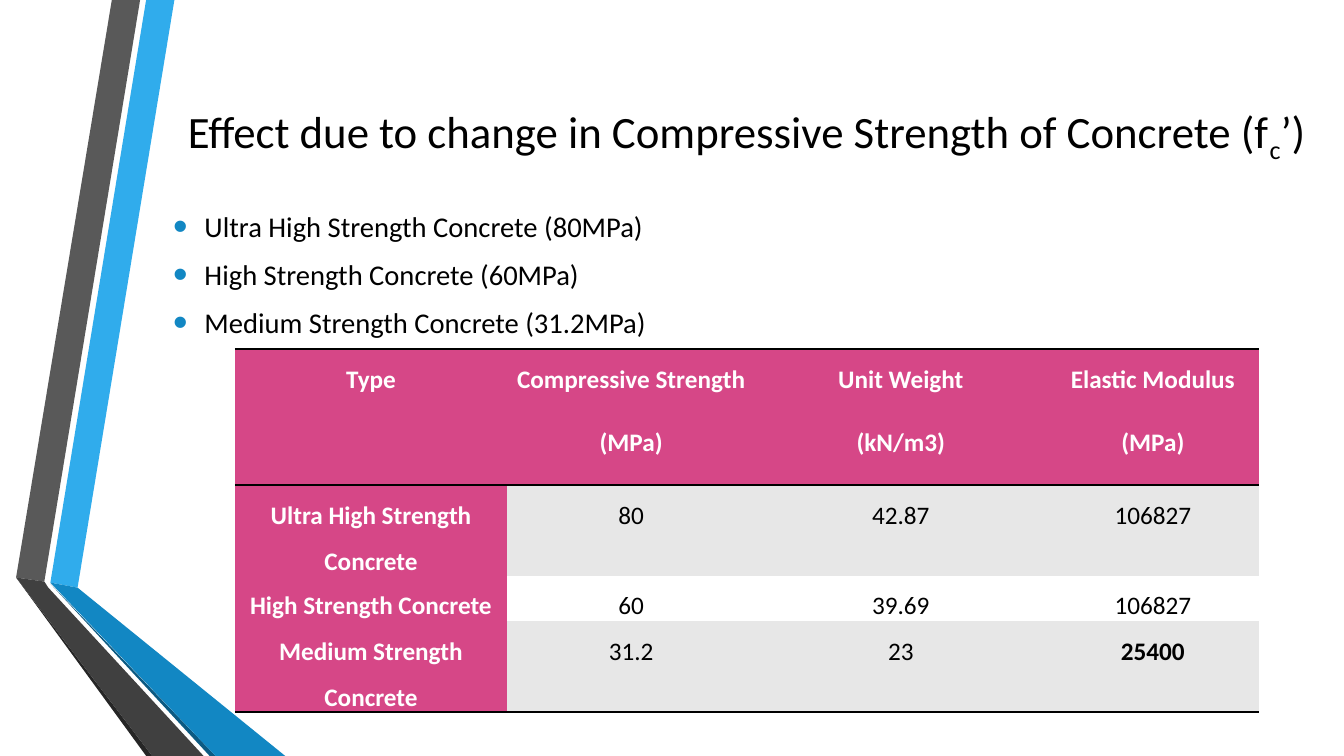
from lxml.etree import SubElement
from pptx import Presentation
from pptx.dml.color import RGBColor
from pptx.enum.text import MSO_ANCHOR, PP_ALIGN
from pptx.oxml import parse_xml
from pptx.oxml.ns import nsdecls, qn
from pptx.util import Inches, Pt

FONT = "Calibri"
BLACK, WHITE, PINK, GRAY = "000000", "FFFFFF", "D64787", "E7E7E7"
BULLET_BLUE = "1287C3"

# Ribbon facets, back to front: colour and corner points in inches
RIBBONS = [
    ("30ACEC", [(0.5, 5.78), (0.77, 5.83), (1.73, 0), (1.45, 0)]),
    ("595959", [(1.39, 0), (1.11, 0), (0.16, 5.73), (0.44, 5.77)]),
    ("262626", [(0.16, 5.73), (1.45, 7.5), (1.51, 7.5)]),
    ("0C5A82", [(0.5, 5.79), (2.08, 7.5), (2.14, 7.5)]),
    ("1287C3", [(0.5, 5.78), (2.14, 7.5), (2.83, 7.5), (0.77, 5.83)]),
    ("404040", [(2.02, 7.5), (0.48, 5.83), (0.44, 5.77), (0.16, 5.73), (1.51, 7.5)]),
]

BULLETS = [
    "Ultra High Strength Concrete (80MPa)",
    "High Strength Concrete (60MPa)",
    "Medium Strength Concrete (31.2MPa)",
]

COLUMN_WIDTHS = [2.7, 2.46, 2.89, 2.11]
ROW_HEIGHTS = [1.35, 0.78, 0.37, 0.78]
ROWS = [
    ["Type", "Compressive Strength\n(MPa)", "Unit Weight\n(kN/m3)", "Elastic Modulus\n(MPa)"],
    ["Ultra High Strength Concrete", "80", "42.87", "106827"],
    ["High Strength Concrete", "60", "39.69", "106827"],
    ["Medium Strength Concrete", "31.2", "23", "25400"],
]
PLAIN_TABLE_STYLE = "{2D5ABB26-0587-4C30-8999-92F81FD0307C}"


def rgb(color):
    return RGBColor.from_string(color)


def style_run(r, size, color=BLACK, bold=False):
    r.font.name = FONT
    r.font.size = Pt(size)
    r.font.bold = bold
    r.font.color.rgb = rgb(color)


def add_ribbon(slide, color, points):
    corners = [(Inches(x), Inches(y)) for x, y in points]
    builder = slide.shapes.build_freeform(*corners[0], scale=1.0)
    builder.add_line_segments(corners[1:], close=True)
    sp = builder.convert_to_shape()
    sp.shadow.inherit = False
    sp.fill.solid()
    sp.fill.fore_color.rgb = rgb(color)
    sp.line.fill.background()


def add_text_frame(slide, left, top, width, height):
    sp = slide.shapes.add_textbox(Inches(left), Inches(top), Inches(width), Inches(height))
    sp.text_frame.word_wrap = True
    return sp.text_frame


def add_title(slide):
    tf = add_text_frame(slide, 1.62, 0.37, 11.57, 1.92)
    tf.vertical_anchor = MSO_ANCHOR.MIDDLE
    p = tf.paragraphs[0]
    p.alignment = PP_ALIGN.CENTER
    parts = [
        ("Effect due to change in Compressive Strength of Concrete (f", 0),
        ("c", -25000),
        ("’)", 0),
    ]
    for text, baseline in parts:
        r = p.add_run()
        r.text = text
        style_run(r, 32)
        if baseline:
            r.font._element.set("baseline", str(baseline))


def set_bullet(p):
    pPr = p._p.get_or_add_pPr()
    pPr.set("marL", str(Inches(0.31)))
    pPr.set("indent", str(Inches(-0.31)))
    color = SubElement(pPr, qn("a:buClr"))
    SubElement(color, qn("a:srgbClr"), val=BULLET_BLUE)
    SubElement(pPr, qn("a:buSzPct"), val="145000")
    SubElement(pPr, qn("a:buFont"), typeface="Arial")
    SubElement(pPr, qn("a:buChar"), char="•")


def add_bullets(slide, items):
    tf = add_text_frame(slide, 1.62, 1.52, 10.96, 1.94)
    tf.margin_top = Inches(0.55)
    tf.text = "\n".join(items)
    for p in tf.paragraphs:
        p.space_before = Pt(4)
        p.space_after = Pt(6)
        set_bullet(p)
        style_run(p.runs[0], 20.4)


def add_border(cell, side):
    line = parse_xml(
        f'<a:{side} {nsdecls("a")} w="{Pt(2)}"><a:solidFill>'
        f'<a:srgbClr val="{BLACK}"/></a:solidFill></a:{side}>'
    )
    tcPr = cell._tc.get_or_add_tcPr()
    # Borders precede the fill, top before bottom
    tcPr.insert(len(tcPr) - 1, line)


def fill_cell(cell, text, fill, color, bold):
    cell.margin_left = cell.margin_right = Inches(0.07)
    cell.margin_top = cell.margin_bottom = 0
    cell.fill.solid()
    cell.fill.fore_color.rgb = rgb(fill)
    cell.text_frame.text = text
    for p in cell.text_frame.paragraphs:
        p.alignment = PP_ALIGN.CENTER
        p.line_spacing = 1.5
        p.space_before = p.space_after = Pt(6)
        style_run(p.runs[0], 18, color, bold)


def add_strength_table(slide):
    frame = slide.shapes.add_table(
        len(ROWS), len(COLUMN_WIDTHS), Inches(2.33), Inches(3.46),
        Inches(sum(COLUMN_WIDTHS)), Inches(sum(ROW_HEIGHTS)),
    )
    table = frame.table
    table._tbl.tblPr.find(qn("a:tableStyleId")).text = PLAIN_TABLE_STYLE
    table.first_row = table.horz_banding = False
    for column, width in zip(table.columns, COLUMN_WIDTHS):
        column.width = Inches(width)
    for row, height in zip(table.rows, ROW_HEIGHTS):
        row.height = Inches(height)

    last = len(ROWS) - 1
    for i, values in enumerate(ROWS):
        for j, text in enumerate(values):
            cell = table.cell(i, j)
            heading = i == 0 or j == 0
            fill = PINK if heading else GRAY if i % 2 else WHITE
            bold = heading or text == "25400"
            fill_cell(cell, text, fill, WHITE if heading else BLACK, bold)
            if i == 0:
                add_border(cell, "lnT")
            if i in (0, last):
                add_border(cell, "lnB")


def main():
    prs = Presentation()
    prs.slide_width, prs.slide_height = Inches(13.33), Inches(7.5)
    slide = prs.slides.add_slide(prs.slide_layouts[6])

    # Decorative ribbons
    for color, points in RIBBONS:
        add_ribbon(slide, color, points)

    # Content
    add_title(slide)
    add_bullets(slide, BULLETS)
    add_strength_table(slide)

    prs.save("out.pptx")


if __name__ == "__main__":
    main()
